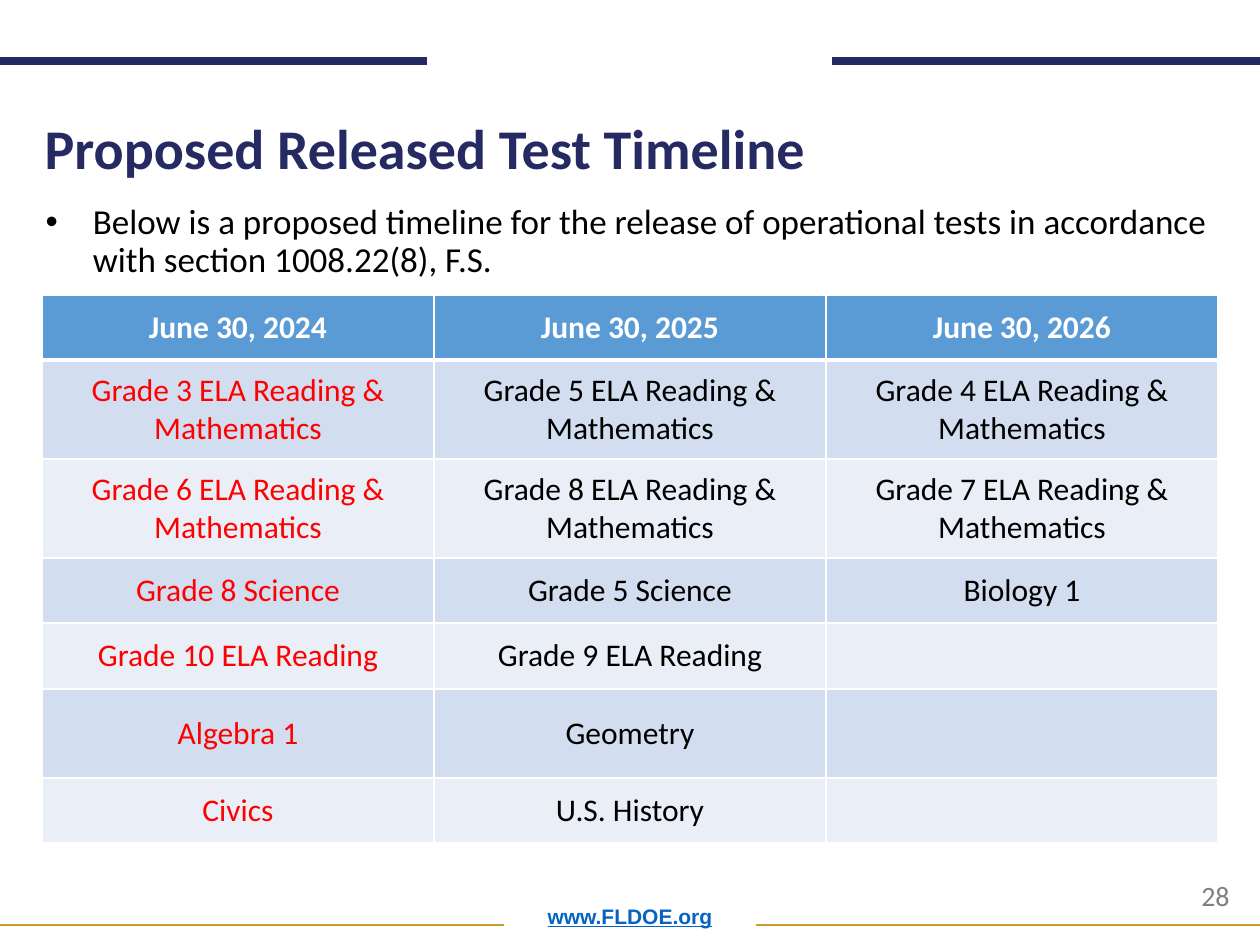
import dataclasses
import typing

import lxml.etree
import pptx
import pptx.dml.color
import pptx.enum.shapes
import pptx.enum.text
import pptx.oxml
import pptx.oxml.ns
import pptx.util

EMU_PER_PX = 914400 / 126
NAVY, GOLD, WHITE, BLACK, RED = "262A63", "CD9D2C", "FFFFFF", "000000", "FF0000"
HEADER_BLUE, BAND_DARK, BAND_LIGHT = "5B9BD5", "D2DEEF", "EAEFF7"
Align = pptx.enum.text.PP_ALIGN
Anchor = pptx.enum.text.MSO_ANCHOR


@dataclasses.dataclass
class Box:
    left: int
    top: int
    width: int
    height: int


@dataclasses.dataclass
class Rule:
    start: int
    end: int
    y: int
    color: str
    points: int


@dataclasses.dataclass
class Style:
    size: int
    color: str
    bold: bool = False
    underline: bool = False
    font: str = "Calibri"
    align: Align = Align.LEFT
    anchor: Anchor = Anchor.TOP
    line_spacing: typing.Optional[float] = None


RULES = [
    Rule(0, 427, 61, NAVY, 5),
    Rule(832, 1260, 61, NAVY, 5),
    Rule(0, 504, 925, GOLD, 1),
    Rule(756, 1260, 925, GOLD, 1),
]
TIMELINE = [
    ["June 30, 2024", "June 30, 2025", "June 30, 2026"],
    ["Grade 3 ELA Reading & Mathematics", "Grade 5 ELA Reading & Mathematics",
     "Grade 4 ELA Reading & Mathematics"],
    ["Grade 6 ELA Reading & Mathematics", "Grade 8 ELA Reading & Mathematics",
     "Grade 7 ELA Reading & Mathematics"],
    ["Grade 8 Science", "Grade 5 Science", "Biology 1"],
    ["Grade 10 ELA Reading", "Grade 9 ELA Reading", ""],
    ["Algebra 1", "Geometry", ""],
    ["Civics", "U.S. History", ""],
]
ROW_HEIGHTS = [65, 99, 99, 65, 66, 89, 65]
COLUMN_WIDTH = 392


def px(length: int) -> int:
    return round(length * EMU_PER_PX)


def rgb(color: str) -> pptx.dml.color.RGBColor:
    return pptx.dml.color.RGBColor.from_string(color)


def style_paragraph(paragraph, style: Style) -> None:
    paragraph.alignment = style.align
    paragraph.space_before = pptx.util.Pt(0)
    if style.line_spacing:
        paragraph.line_spacing = style.line_spacing
    font = paragraph.font
    font.name, font.size = style.font, pptx.util.Pt(style.size)
    font.bold, font.underline = style.bold, style.underline
    font.color.rgb = rgb(style.color)


def write_text(shape, box: Box, text: str, style: Style) -> None:
    shape.left, shape.top = px(box.left), px(box.top)
    shape.width, shape.height = px(box.width), px(box.height)
    frame = shape.text_frame
    frame.text = text
    frame.word_wrap = True
    frame.auto_size = pptx.enum.text.MSO_AUTO_SIZE.NONE
    frame.vertical_anchor = style.anchor
    style_paragraph(frame.paragraphs[0], style)


def remove_bullet(paragraph) -> None:
    properties = paragraph._p.get_or_add_pPr()
    properties.set("marL", "0")
    properties.set("indent", "0")
    lxml.etree.SubElement(properties, pptx.oxml.ns.qn("a:buNone"))


def draw_rule(slide, rule: Rule) -> None:
    line = slide.shapes.add_connector(
        pptx.enum.shapes.MSO_CONNECTOR.STRAIGHT,
        px(rule.start), px(rule.y), px(rule.end), px(rule.y))
    line.line.color.rgb = rgb(rule.color)
    line.line.width = pptx.util.Pt(rule.points)
    lxml.etree.SubElement(line._element.spPr, pptx.oxml.ns.qn("a:effectLst"))


def set_borders(cell, row: int) -> None:
    widths = {"lnL": 1, "lnR": 1, "lnT": 3 if row == 1 else 1, "lnB": 3 if row == 0 else 1}
    properties = cell._tc.get_or_add_tcPr()
    for position, (side, points) in enumerate(widths.items()):
        border = pptx.oxml.parse_xml(
            f'<a:{side} {pptx.oxml.ns.nsdecls("a")} w="{pptx.util.Pt(points)}">'
            f'<a:solidFill><a:srgbClr val="{WHITE}"/></a:solidFill></a:{side}>')
        properties.insert(position, border)


def cell_colors(row: int, column: int) -> typing.Tuple[str, str]:
    if row == 0:
        return HEADER_BLUE, WHITE
    return (BAND_DARK if row % 2 else BAND_LIGHT), (RED if column == 0 else BLACK)


def draw_timeline(slide) -> None:
    columns = len(TIMELINE[0])
    table = slide.shapes.add_table(
        len(TIMELINE), columns, px(42), px(295),
        px(COLUMN_WIDTH * columns), px(sum(ROW_HEIGHTS))).table
    for column in table.columns:
        column.width = px(COLUMN_WIDTH)
    for row, (height, entries) in enumerate(zip(ROW_HEIGHTS, TIMELINE)):
        table.rows[row].height = px(height)
        for column, entry in enumerate(entries):
            fill, color = cell_colors(row, column)
            cell = table.cell(row, column)
            cell.text = entry
            cell.vertical_anchor = Anchor.MIDDLE
            cell.fill.solid()
            cell.fill.fore_color.rgb = rgb(fill)
            set_borders(cell, row)
            style_paragraph(cell.text_frame.paragraphs[0],
                            Style(18, color, bold=row == 0, align=Align.CENTER))


def main() -> None:
    deck = pptx.Presentation()
    deck.slide_width, deck.slide_height = px(1260), px(945)
    slide = deck.slides.add_slide(deck.slide_layouts[1])
    for rule in RULES:
        draw_rule(slide, rule)

    write_text(slide.shapes.title, Box(32, 111, 1197, 77), "Proposed Released Test Timeline",
               Style(32, NAVY, bold=True, anchor=Anchor.BOTTOM, line_spacing=0.9))
    introduction = slide.placeholders[1]
    remove_bullet(introduction.text_frame.paragraphs[0])
    write_text(introduction, Box(33, 198, 1196, 67),
               "Below is a proposed timeline for the release of operational tests "
               "in accordance with section 1008.22(8), F.S.",
               Style(20, BLACK, line_spacing=0.9))
    draw_timeline(slide)

    website = slide.shapes.add_textbox(0, 0, 0, 0)
    write_text(website, Box(87, 882, 1086, 53), "www.FLDOE.org",
               Style(12, "0563C1", bold=True, underline=True, font="Arial",
                     align=Align.CENTER, anchor=Anchor.BOTTOM, line_spacing=0.9))
    page_number = slide.shapes.add_textbox(0, 0, 0, 0)
    write_text(page_number, Box(1189, 872, 66, 47), "28", Style(16, "7F7F7F"))
    deck.save("out.pptx")


if __name__ == "__main__":
    main()
